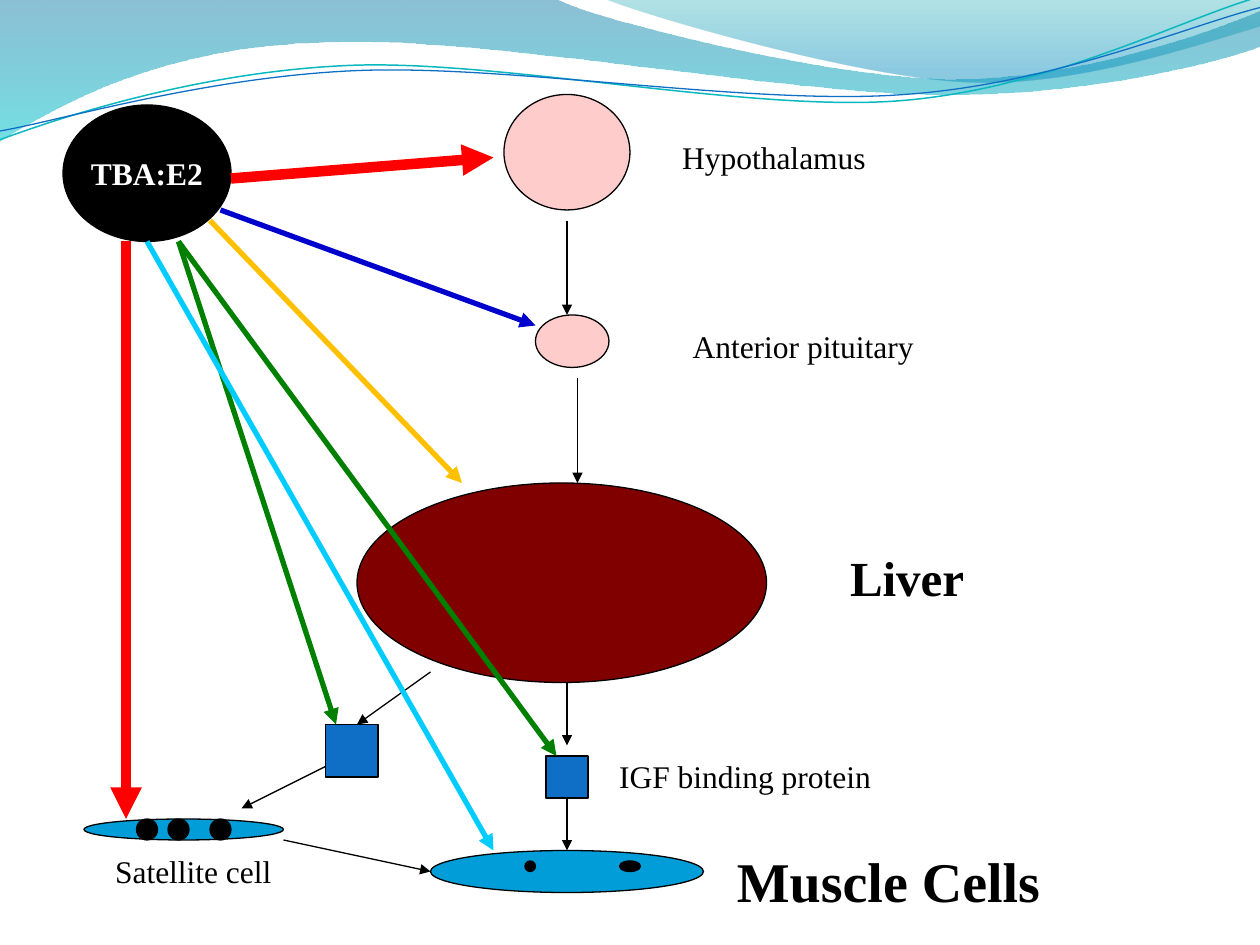
from pptx import Presentation
from pptx.dml.color import RGBColor
from pptx.enum.shapes import MSO_CONNECTOR as CONN, MSO_SHAPE as SHAPE
from pptx.enum.text import MSO_ANCHOR, MSO_AUTO_SIZE, PP_ALIGN
from pptx.oxml.ns import qn
from pptx.util import Pt
from lxml.etree import SubElement

FONT = "Times New Roman"
BLACK, PINK, LIVER, CELL, BLUE = "000000", "FFCCCC", "800000", "009DD9", "0F6FC6"


def rgb(value):
    return RGBColor.from_string(value)


def set_text(sp, text, size, bold=False, color=BLACK):
    tf = sp.text_frame
    tf.text = text
    tf.word_wrap = False
    font = tf.paragraphs[0].runs[0].font
    font.name, font.size, font.bold = FONT, Pt(size), bold
    font.color.rgb = rgb(color)
    return tf


def add_label(slide, x, y, w, h, text, size=18, bold=False):
    box = slide.shapes.add_textbox(Pt(x), Pt(y), Pt(w), Pt(h))
    set_text(box, text, size, bold).auto_size = MSO_AUTO_SIZE.SHAPE_TO_FIT_TEXT


def add_node(slide, x, y, w, h, fill, kind=SHAPE.OVAL):
    sp = slide.shapes.add_shape(kind, Pt(x), Pt(y), Pt(w), Pt(h))
    sp.shadow.inherit = False
    sp.fill.solid()
    sp.fill.fore_color.rgb = rgb(fill)
    sp.line.color.rgb = rgb(BLACK)
    sp.line.width = Pt(0.75)
    return sp


def add_arrow(slide, x1, y1, x2, y2, color=BLACK, width=0.75):
    line = slide.shapes.add_connector(CONN.STRAIGHT, Pt(x1), Pt(y1), Pt(x2), Pt(y2))
    line.line.color.rgb = rgb(color)
    line.line.width = Pt(width)
    SubElement(line.line._get_or_add_ln(), qn("a:tailEnd"), type="triangle")
    SubElement(line._element.spPr, qn("a:effectLst"))
    return line


def add_curve(slide, x, y, segments, closed):
    """Outline of corners (two numbers) and Bezier curves (six numbers)."""
    first, *rest = [(Pt(x + seg[i]), Pt(y + seg[i + 1]))
                    for seg in segments for i in range(0, len(seg), 2)]
    builder = slide.shapes.build_freeform(*first)
    builder.add_line_segments(rest, close=closed)
    sp = builder.convert_to_shape()
    sp.shadow.inherit = False
    lines = iter(list(sp._element.iter(qn("a:lnTo"))))
    for seg in segments[1:]:
        start = next(lines)
        if len(seg) == 6:
            start.tag = qn("a:cubicBezTo")
            for extra in (next(lines), next(lines)):
                start.append(extra[0])
                extra.getparent().remove(extra)
    return sp


def add_waves(slide, x, y):
    bands = [
        ([(0, 0), (317, -1), (343, 12, 478, 45, 546, 45), (614, 45, 690, 19, 720, 6),
          (721, 26), (708, 32, 626, 55, 537, 54), (448, 54, 275, 20, 185, 24),
          (93, 26, 33, 60, -1, 81)],
         [(0, "0074A1", 45), (1, "00C6CF", 55)]),
        ([(345, -1), (366, 8, 491, 45, 554, 47), (616, 50, 692, 23, 720, 15), (720, 0)],
         [(0, "00A1A9", 30), (0.8, "008BBF", 45)]),
    ]
    for segments, stops in bands:
        sp = add_curve(slide, x, y, segments, True)
        sp.line.fill.background()
        sp.fill.gradient()
        sp.fill.gradient_angle = 270
        for stop, (position, color, opacity) in zip(sp.fill.gradient_stops, stops):
            stop.position = position
            stop.color.rgb = rgb(color)
            clr = stop._gs.find(qn("a:srgbClr"))
            SubElement(clr, qn("a:alpha"), val=str(opacity * 1000))

    strands = [
        ([(-1.4, 62.9), (33.8, 51.7, 114.1, 29.4, 199.8, 29.9),
          (284.9, 30.3, 425.8, 67.3, 512.4, 64.9),
          (599, 62.4, 676.5, 25.7, 720.2, 15.5)], "0AB8BF", 0.85),
        ([(-1.1, 57.9), (32.9, 53.7, 118.3, 32.5, 204.1, 33),
          (290.6, 33.4, 428.9, 63.8, 515.5, 61.4),
          (601.3, 59.6, 678.4, 30.1, 721.4, 21.3)], BLUE, 0.75),
    ]
    for segments, color, width in strands:
        sp = add_curve(slide, x, y, segments, False)
        sp.rotation = 357.3
        sp.fill.background()
        sp.line.color.rgb = rgb(color)
        sp.line.width = Pt(width)


def add_hormone_axis(slide, x, y):
    """Hypothalamus, pituitary and liver, from top to bottom."""
    add_node(slide, x + 84, y, 72, 66, PINK)
    add_node(slide, x + 102, y + 126, 42, 30, PINK)
    add_node(slide, x, y + 222, 234, 114, LIVER)
    for dx, top, bottom in [(120, 72, 126), (126, 162, 222), (120, 336, 372)]:
        add_arrow(slide, x + dx, y + top, x + dx, y + bottom)
    add_label(slide, x + 178.7, y + 21.5, 120, 29, "Hypothalamus")
    add_label(slide, x + 184.7, y + 129.5, 143, 29, "Anterior pituitary")
    add_label(slide, x + 274.7, y + 255.5, 81, 41, "Liver", 28, True)


def add_muscle(slide, x, y):
    """Satellite and muscle cells with their binding proteins."""
    add_node(slide, x + 198, y + 96, 156, 24, CELL)
    add_node(slide, x, y + 78, 114, 12, CELL)
    for x1, y1, x2, y2 in [(198, -6, 156, 24), (138, 48, 90, 72), (114, 90, 198, 108)]:
        add_arrow(slide, x + x1, y + y1, x + x2, y + y2)
    add_node(slide, x + 138, y + 24, 30, 30, BLUE, SHAPE.RECTANGLE)
    protein = add_node(slide, x + 264, y + 42, 24, 24, BLUE, SHAPE.RECTANGLE)
    add_arrow(slide, x + 276, y + 66, x + 276, y + 96).begin_connect(protein, 2)
    nuclei = [(30, 78, 12, 12), (48, 78, 12, 12), (72, 78, 12, 12),
              (252, 102, 6, 6), (306, 102, 12, 6)]
    for dx, dy, w, h in nuclei:
        add_node(slide, x + dx, y + dy, w, h, BLACK)
    add_label(slide, x + 366, y + 90, 190, 46, "Muscle Cells", 32, True)
    add_label(slide, x + 10.7, y + 93.4, 105, 29, "Satellite cell")
    add_label(slide, x + 298.7, y + 39, 160, 29, "IGF binding protein")


def add_implant(slide, x, y):
    """The TBA:E2 source and the coloured arrows to all it acts on."""
    sp = add_node(slide, x, y, 96, 78, BLACK)
    tf = set_text(sp, "TBA:E2", 18, True, "FFFFFF")
    tf.vertical_anchor = MSO_ANCHOR.MIDDLE
    tf.paragraphs[0].alignment = PP_ALIGN.CENTER
    effects = [
        (96, 42, 246, 30, "FF0000", 6),
        (90, 60, 270, 126, "0000CC", 3),
        (84, 66, 228, 216, "FFC000", 3),
        (66, 78, 282, 372, "008000", 3),
        (66, 78, 156, 354, "008000", 3),
        (48, 78, 246, 426, "00CCFF", 3),
        (36, 78, 36, 408, "FF0000", 6),
    ]
    for x1, y1, x2, y2, color, width in effects:
        add_arrow(slide, x + x1, y + y1, x + x2, y + y2, color, width)


def main():
    prs = Presentation()
    prs.slide_width, prs.slide_height = Pt(720), Pt(540)
    slide = prs.slides.add_slide(prs.slide_layouts[6])
    add_waves(slide, 0, 0)
    add_hormone_axis(slide, 204, 54)
    add_muscle(slide, 48, 390)
    add_implant(slide, 36, 60)
    prs.save("out.pptx")


if __name__ == "__main__":
    main()
